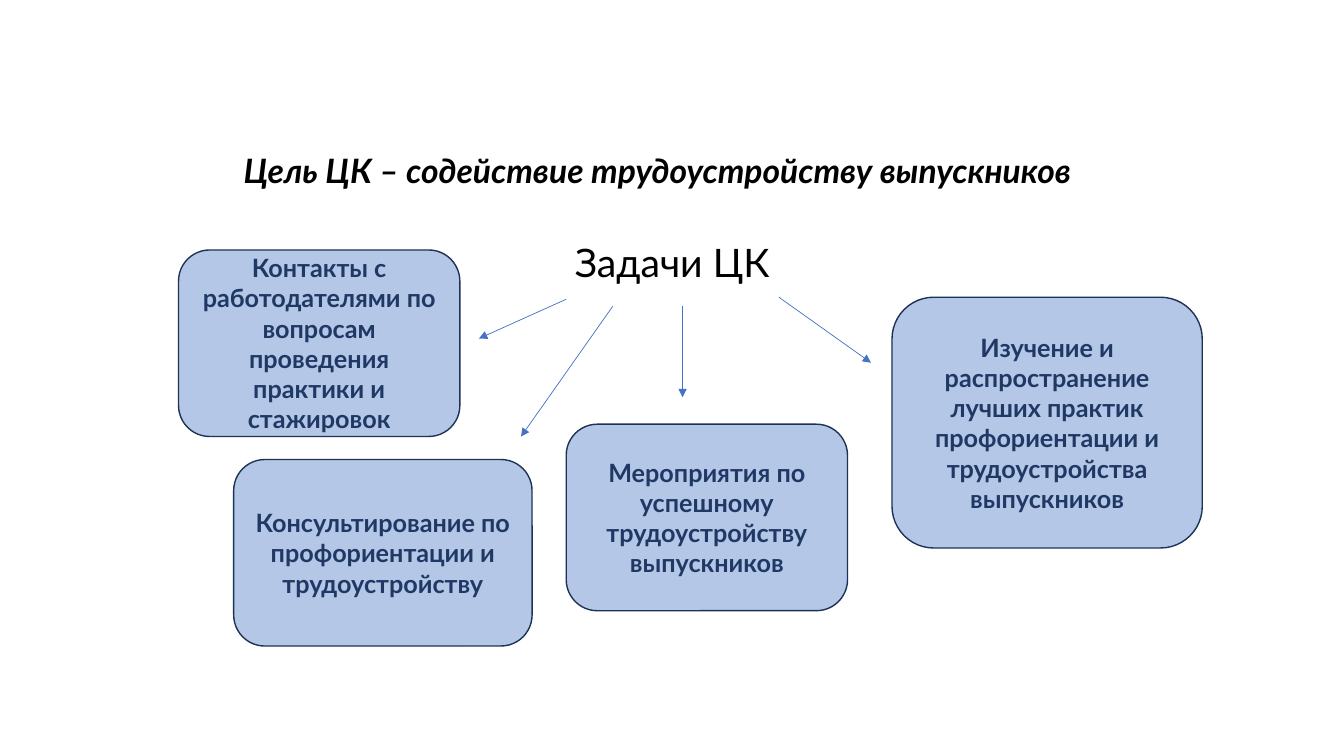
from pptx import Presentation
from pptx.dml.color import RGBColor
from pptx.enum import shapes, text
from pptx.oxml import ns
from pptx.util import Cm, Pt
from lxml import etree

BLACK = RGBColor(0, 0, 0)
NAVY = RGBColor(0x20, 0x38, 0x64)
EDGE = RGBColor(0x1E, 0x32, 0x56)
PALE = RGBColor(0xB4, 0xC7, 0xE7)
BLUE = RGBColor(0x44, 0x72, 0xC4)

LEFT, MID = text.PP_ALIGN.LEFT, text.PP_ALIGN.CENTER
TOP, CORE = text.MSO_ANCHOR.TOP, text.MSO_ANCHOR.MIDDLE

TASKS = [
    ("Контакты с работодателями по вопросам проведения практики и стажировок",
     (4.5, 6.3, 7.09, 4.7)),
    ("Консультирование по профориентации и трудоустройству",
     (5.89, 11.58, 7.52, 4.7)),
    ("Мероприятия по успешному трудоустройству выпускников",
     (14.27, 10.69, 7.09, 4.7)),
    ("Изучение и распространение лучших практик профориентации "
     "и трудоустройства выпускников",
     (22.48, 7.49, 7.82, 6.32)),
]
ARROWS = [
    (14.27, 7.54, 12.07, 8.53),
    (15.44, 7.72, 13.13, 11),
    (17.2, 7.72, 17.2, 10.01),
    (19.63, 7.49, 21.95, 9.14),
]


def write(shape, words, size, color, align=MID, anchor=CORE, gap=1.0, **style):
    frame = shape.text_frame
    frame.word_wrap = True
    frame.vertical_anchor = anchor
    par = frame.paragraphs[0]
    par.alignment = align
    par.line_spacing = gap
    run = par.add_run()
    run.text = words
    run.font.color.rgb = color
    for key, val in {"name": "Lato", "size": Pt(size), **style}.items():
        setattr(run.font, key, val)


def label(slide, words, place, size, **style):
    box = slide.shapes.add_textbox(*map(Cm, place))
    write(box, words, size, BLACK, gap=0.9, **style)


def task(slide, words, place):
    kind = shapes.MSO_SHAPE.ROUNDED_RECTANGLE
    box = slide.shapes.add_shape(kind, *map(Cm, place))
    box.shadow.inherit = False
    box.fill.solid()
    box.fill.fore_color.rgb = PALE
    box.line.color.rgb = EDGE
    box.line.width = Pt(1)
    write(box, words, 18, NAVY, bold=True)


def arrow(slide, ends):
    kind = shapes.MSO_CONNECTOR.STRAIGHT
    link = slide.shapes.add_connector(kind, *map(Cm, ends))
    link.line.color.rgb = BLUE
    link.line.width = Pt(0.5)
    tip = etree.SubElement(link.line._get_or_add_ln(), ns.qn("a:tailEnd"))
    tip.set("type", "triangle")
    etree.SubElement(link._element.spPr, ns.qn("a:effectLst"))


def main():
    deck = Presentation()
    deck.slide_width, deck.slide_height = Cm(33.87), Cm(19.05)
    slide = deck.slides.add_slide(deck.slide_layouts[6])
    label(slide, "Цель ЦК – содействие трудоустройству выпускников",
          (5.89, 2.77, 25.07, 3.15), 24, align=LEFT, bold=True, italic=True)
    label(slide, "Задачи ЦК", (2.92, 6.02, 28.04, 8.74), 28, anchor=TOP)
    for words, place in TASKS:
        task(slide, words, place)
    for ends in ARROWS:
        arrow(slide, ends)
    deck.save("out.pptx")


if __name__ == "__main__":
    main()
